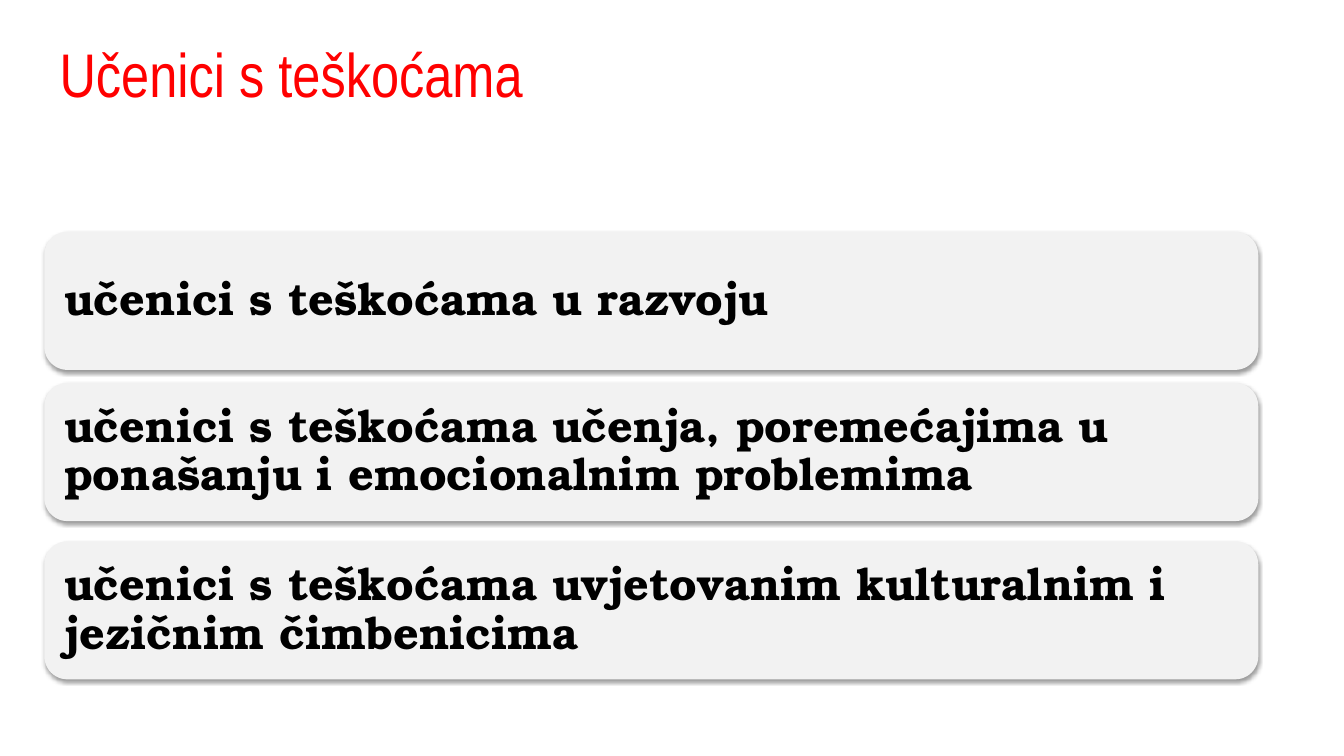
from lxml import etree
from pptx import Presentation
from pptx.dml.color import RGBColor
from pptx.enum.shapes import MSO_SHAPE
from pptx.enum.text import MSO_ANCHOR, PP_ALIGN
from pptx.oxml.ns import qn
from pptx.util import Inches, Pt

ROUNDED = MSO_SHAPE.ROUNDED_RECTANGLE
MIDDLE = MSO_ANCHOR.MIDDLE
LEFT = PP_ALIGN.LEFT

RED = RGBColor(0xFF, 0x00, 0x00)
BLACK = RGBColor(0x00, 0x00, 0x00)
LIGHT_GREY = RGBColor(0xF2, 0xF2, 0xF2)

TITLE = "Učenici s teškoćama"
GROUPS = [  # top in inches, text
    (2.3, "učenici s teškoćama u razvoju"),
    (3.8, "učenici s teškoćama učenja, poremećajima u ponašanju i emocionalnim problemima"),
    (5.37, "učenici s teškoćama uvjetovanim kulturalnim i jezičnim čimbenicima"),
]
CARD_LEFT, CARD_WIDTH, CARD_HEIGHT = 0.44, 12.04, 1.37


def set_text(shape, text, font, size, color, inset, bold=False):
    tf = shape.text_frame
    tf.word_wrap = True
    tf.vertical_anchor = MIDDLE
    tf.margin_left = tf.margin_right = tf.margin_top = tf.margin_bottom = Inches(inset)
    tf.text = text
    p = tf.paragraphs[0]
    p.alignment = LEFT
    p.line_spacing = 0.9
    r = p.runs[0]
    r.font.name = font
    r.font.size = Pt(size)
    r.font.bold = bold
    r.font.color.rgb = color


def add_shadow(shape):
    """Give the shape a soft black shadow that falls straight down."""
    shape.shadow.inherit = False
    effects = shape._element.spPr.find(qn("a:effectLst"))
    shadow = etree.SubElement(effects, qn("a:outerShdw"), blurRad=str(Pt(3.1)),
                              dist=str(Pt(1.6)), dir="5400000", rotWithShape="0")
    color = etree.SubElement(shadow, qn("a:srgbClr"), val=str(BLACK))
    etree.SubElement(color, qn("a:alpha"), val="38000")


def add_card(s, top, text):
    card = s.shapes.add_shape(ROUNDED, Inches(CARD_LEFT), Inches(top),
                              Inches(CARD_WIDTH), Inches(CARD_HEIGHT))
    card.fill.solid()
    card.fill.fore_color.rgb = LIGHT_GREY
    card.line.fill.background()
    add_shadow(card)
    set_text(card, text, "TeX Gyre Bonum", 32, BLACK, 0.13, bold=True)


def main():
    prs = Presentation()
    prs.slide_width, prs.slide_height = Inches(13.33), Inches(7.5)
    s = prs.slides.add_slide(prs.slide_layouts[6])
    for top, text in GROUPS:
        add_card(s, top, text)
    title = s.shapes.add_textbox(Inches(0.59), Inches(0.43), Inches(11.58), Inches(0.67))
    set_text(title, TITLE, "Arial Narrow", 44, RED, 0)
    prs.save("out.pptx")


if __name__ == "__main__":
    main()
